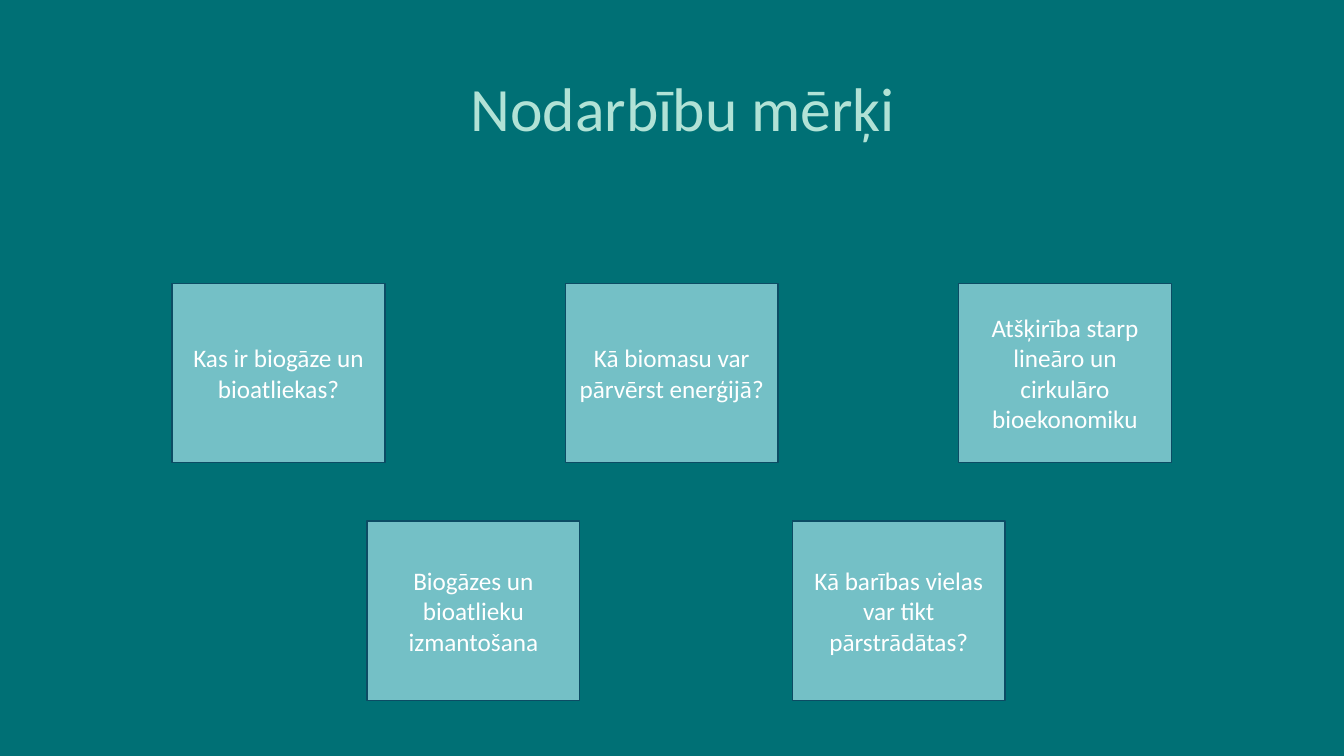
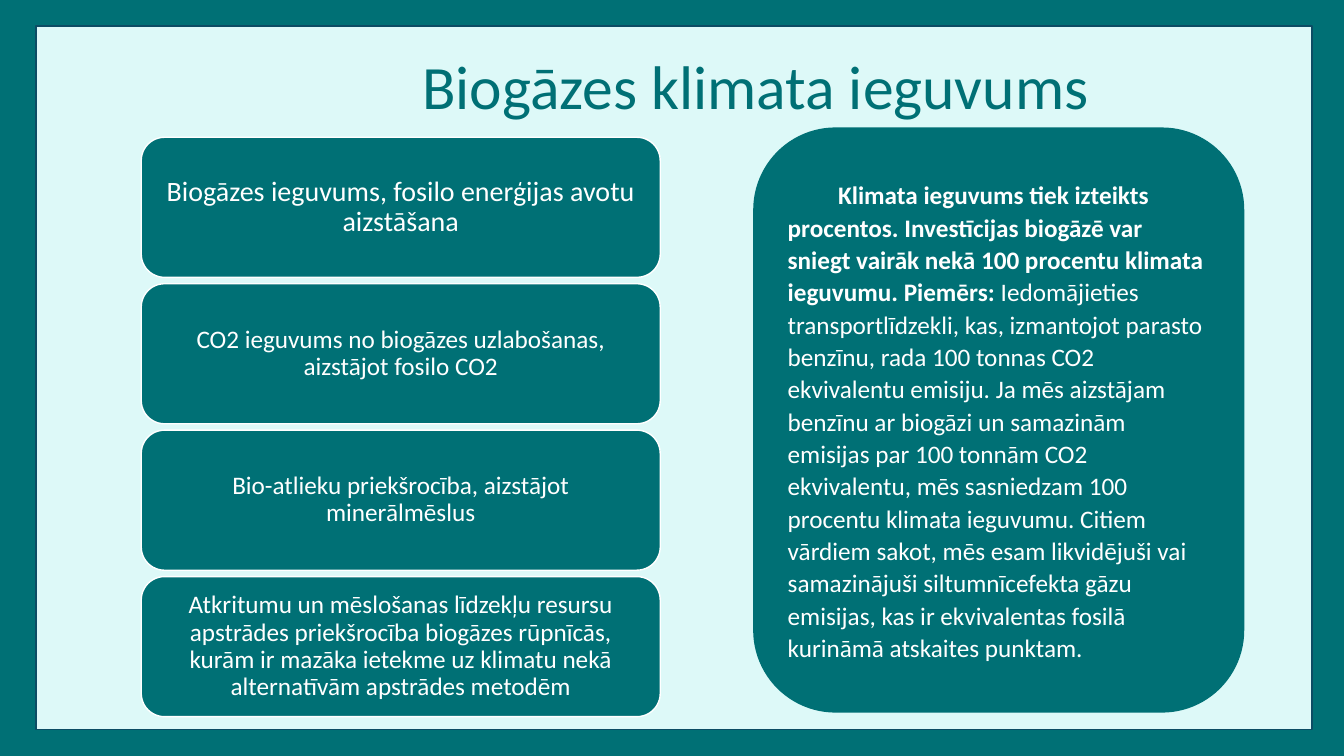
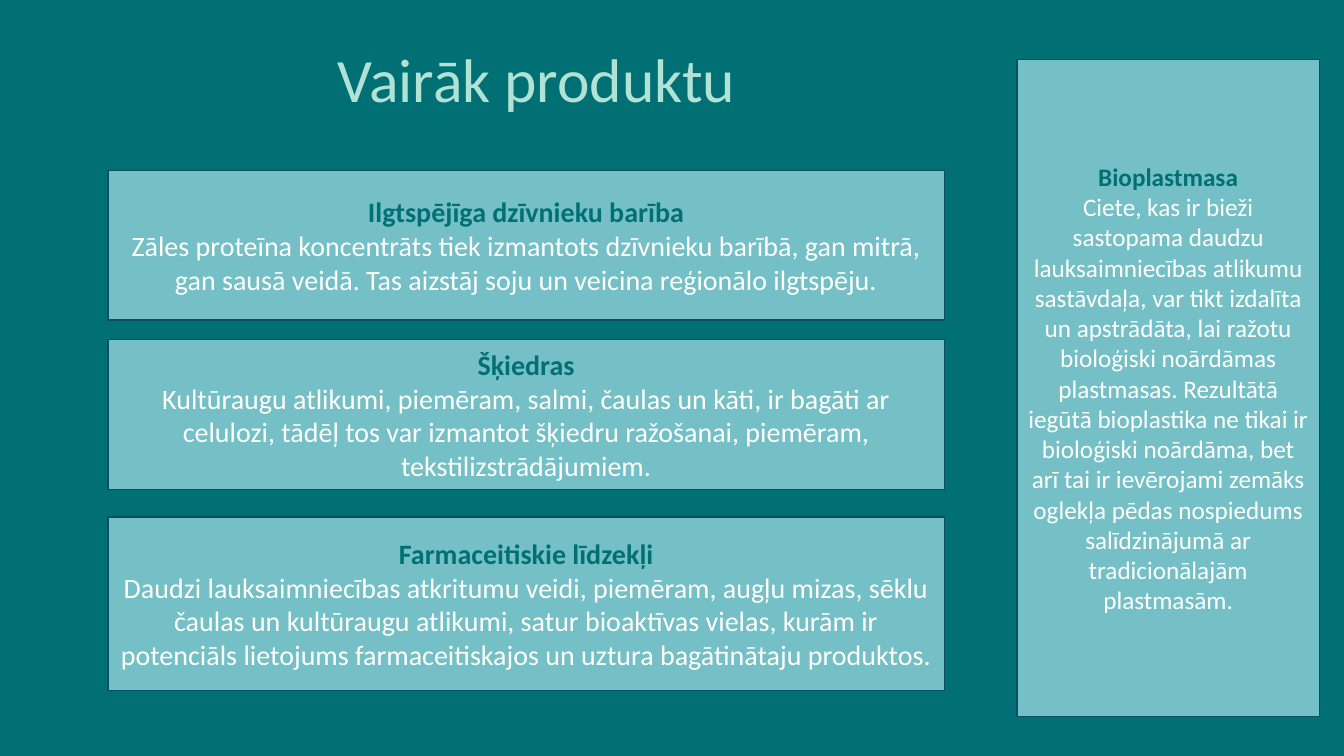
"""Build three slides on biogas goals, climate benefit and further products."""
from pptx import Presentation
from pptx.dml.color import RGBColor
from pptx.enum.shapes import MSO_SHAPE
from pptx.enum.text import MSO_ANCHOR, PP_ALIGN
from pptx.util import Cm, Pt

RECT, ROUND = MSO_SHAPE.RECTANGLE, MSO_SHAPE.ROUNDED_RECTANGLE
LEFT, CENTER = PP_ALIGN.LEFT, PP_ALIGN.CENTER
MIDDLE = MSO_ANCHOR.MIDDLE

FONT = "Calibri"
TEAL, AQUA, MINT = "007075", "74C0C6", "B1E2D6"
ICE, NAVY, WHITE = "DDF9F8", "0C4C64", "FFFFFF"

GOAL_ROWS = [
    (4.34, 7.14, 9.91, [
        "Kas ir biogāze un bioatliekas?",
        "Kā biomasu var pārvērst enerģijā?",
        "Atšķirība starp lineāro un cirkulāro bioekonomiku",
    ]),
    (9.25, 13.13, 10.72, [
        "Biogāzes un bioatlieku izmantošana",
        "Kā barības vielas var tikt pārstrādātas?",
    ]),
]

BENEFITS = [
    ("Biogāzes ieguvums, fosilo enerģijas avotu aizstāšana", 20),
    ("CO2 ieguvums no biogāzes uzlabošanas, aizstājot fosilo CO2", 18),
    ("Bio-atlieku priekšrocība, aizstājot minerālmēslus", 18),
    ("Atkritumu un mēslošanas līdzekļu resursu apstrādes priekšrocība "
     "biogāzes rūpnīcās, kurām ir mazāka ietekme uz klimatu nekā "
     "alternatīvām apstrādes metodēm", 18),
]

EXAMPLE = [
    ("Klimata ieguvums tiek izteikts procentos. Investīcijas biogāzē var "
     "sniegt vairāk nekā 100 procentu klimata ieguvumu. Piemērs:", WHITE, True),
    (" Iedomājieties transportlīdzekli, kas, izmantojot parasto benzīnu, "
     "rada 100 tonnas CO2 ekvivalentu emisiju. Ja mēs aizstājam benzīnu ar "
     "biogāzi un samazinām emisijas par 100 tonnām CO2 ekvivalentu, mēs "
     "sasniedzam 100 procentu klimata ieguvumu. Citiem vārdiem sakot, mēs "
     "esam likvidējuši vai samazinājuši siltumnīcefekta gāzu emisijas, kas "
     "ir ekvivalentas fosilā kurināmā atskaites punktam.", WHITE, False),
]

PRODUCTS = [
    ((2.72, 4.29, 21.08, 3.78), 20, "Ilgtspējīga dzīvnieku barība",
     "Zāles proteīna koncentrāts tiek izmantots dzīvnieku barībā, gan mitrā, "
     "gan sausā veidā. Tas aizstāj soju un veicina reģionālo ilgtspēju."),
    ((2.72, 8.56, 21.08, 3.78), 20, "Šķiedras",
     "Kultūraugu atlikumi, piemēram, salmi, čaulas un kāti, ir bagāti ar "
     "celulozi, tādēļ tos var izmantot šķiedru ražošanai, piemēram, "
     "tekstilizstrādājumiem."),
    ((2.72, 13.03, 21.08, 4.37), 20, "Farmaceitiskie līdzekļi",
     "Daudzi lauksaimniecības atkritumu veidi, piemēram, augļu mizas, sēklu "
     "čaulas un kultūraugu atlikumi, satur bioaktīvas vielas, kurām ir "
     "potenciāls lietojums farmaceitiskajos un uztura bagātinātaju produktos."),
    ((25.63, 1.5, 7.62, 16.56), 18, "Bioplastmasa",
     "Ciete, kas ir bieži sastopama daudzu lauksaimniecības atlikumu "
     "sastāvdaļa, var tikt izdalīta un apstrādāta, lai ražotu bioloģiski "
     "noārdāmas plastmasas. Rezultātā iegūtā bioplastika ne tikai ir "
     "bioloģiski noārdāma, bet arī tai ir ievērojami zemāks oglekļa pēdas "
     "nospiedums salīdzinājumā ar tradicionālajām plastmasām."),
]


def rgb(value):
    return RGBColor.from_string(value)


def write(sp, paragraphs, size, align=CENTER, spacing=None):
    tf = sp.text_frame
    tf.word_wrap = True
    for i, runs in enumerate(paragraphs):
        p = tf.add_paragraph() if i else tf.paragraphs[0]
        p.alignment = align
        if spacing:
            p.line_spacing = spacing
        for text, color, bold in runs:
            r = p.add_run()
            r.text = text
            r.font.name = FONT
            r.font.size = Pt(size)
            r.font.bold = bold
            r.font.color.rgb = rgb(color)


def add_box(s, box, fill=AQUA, line=NAVY, kind=RECT):
    sp = s.shapes.add_shape(kind, *map(Cm, box))
    sp.shadow.inherit = False
    sp.fill.solid()
    sp.fill.fore_color.rgb = rgb(fill)
    sp.line.color.rgb = rgb(line)
    sp.line.width = Pt(1)
    sp.text_frame.vertical_anchor = MIDDLE
    return sp


def add_slide(prs):
    s = prs.slides.add_slide(prs.slide_layouts[6])
    s.background.fill.solid()
    s.background.fill.fore_color.rgb = rgb(TEAL)
    return s


def add_title(s, text, left, top, width=13.31, color=MINT, align=LEFT):
    sp = s.shapes.add_textbox(Cm(left), Cm(top), Cm(width), Cm(2.13))
    write(sp, [[(text, color, False)]], 44, align)


def build_goals(prs):
    s = add_slide(prs)
    add_title(s, "Nodarbību mērķi", 11.61, 1.65)
    for left, top, step, goals in GOAL_ROWS:
        for i, goal in enumerate(goals):
            sp = add_box(s, (left + i * step, top, 5.36, 4.52))
            write(sp, [[(goal, WHITE, False)]], 18)


def build_benefits(prs):
    s = add_slide(prs)
    add_box(s, (0.91, 0.66, 32.16, 17.73), ICE)
    add_title(s, "Biogāzes klimata ieguvums", 7.77, 1.09, 22.56, TEAL, CENTER)
    for i, (text, size) in enumerate(BENEFITS):
        sp = add_box(s, (3.56, 3.46 + i * 3.69, 13.08, 3.53), TEAL, WHITE, ROUND)
        tf = sp.text_frame
        tf.margin_left = tf.margin_right = Cm(0.2)
        tf.margin_top = tf.margin_bottom = Cm(0.2)
        write(sp, [[(text, WHITE, False)]], size, spacing=0.9)
    sp = add_box(s, (19, 3.23, 12.34, 14.71), TEAL, TEAL, ROUND)
    write(sp, [EXAMPLE], 18, LEFT, 1.07)
    pPr = sp.text_frame.paragraphs[0]._p.get_or_add_pPr()
    pPr.set("marL", "0")
    pPr.set("indent", str(Cm(1.27)))


def build_products(prs):
    s = add_slide(prs)
    add_title(s, "Vairāk produktu", 8.26, 0.91)
    for box, size, name, text in PRODUCTS:
        write(add_box(s, box), [[(name, TEAL, True)], [(text, WHITE, False)]], size)


def main():
    prs = Presentation()
    prs.slide_width, prs.slide_height = Cm(33.87), Cm(19.05)
    build_goals(prs)
    build_benefits(prs)
    build_products(prs)
    prs.save("out.pptx")


if __name__ == "__main__":
    main()
